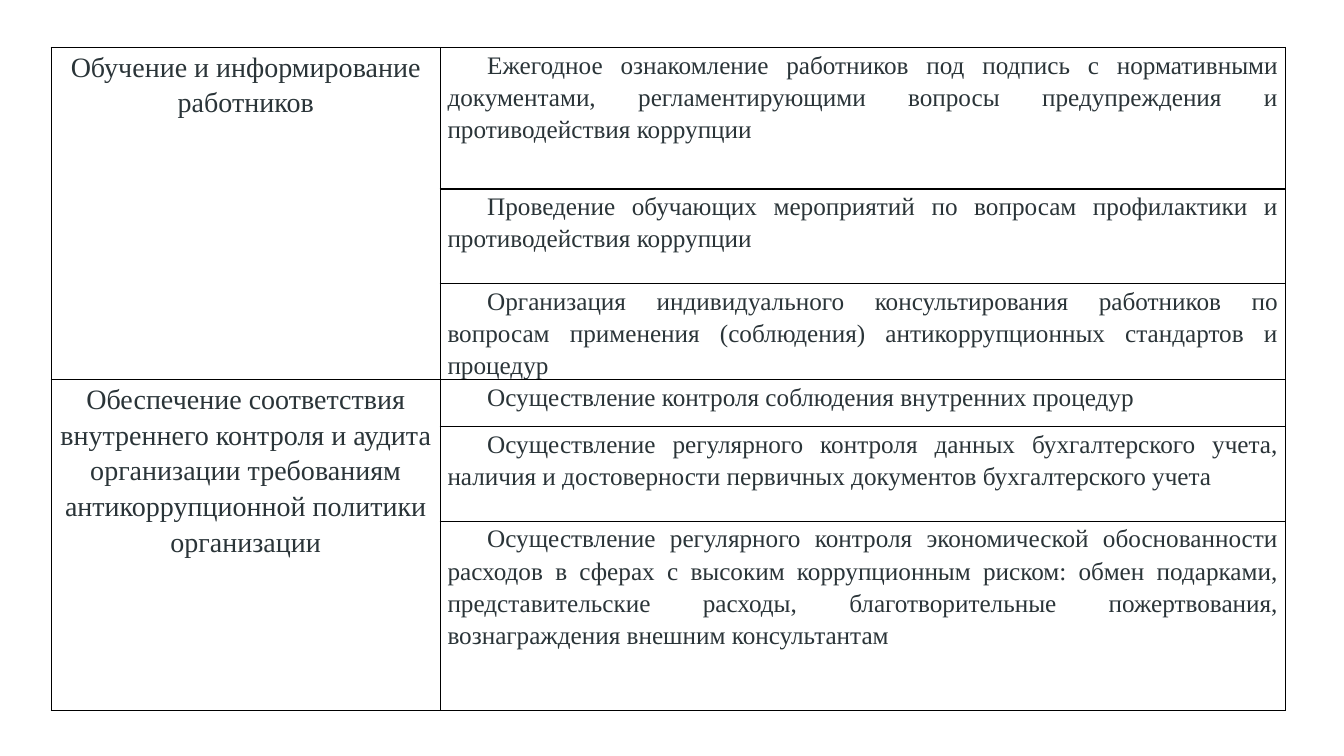
from lxml.etree import SubElement
from pptx import Presentation
from pptx.dml.color import RGBColor
from pptx.enum.text import PP_ALIGN as Align
from pptx.oxml.ns import qn
from pptx.util import Pt

MEASURES = [
    ("Обучение и информирование работников", [
        ("Ежегодное ознакомление работников под подпись с нормативными документами, "
         "регламентирующими вопросы предупреждения и противодействия коррупции", 3),
        ("Проведение обучающих мероприятий по вопросам профилактики и "
         "противодействия коррупции", 2),
        ("Организация индивидуального консультирования работников по вопросам "
         "применения (соблюдения) антикоррупционных стандартов и процедур", 2),
    ]),
    ("Обеспечение соответствия внутреннего контроля и аудита организации "
     "требованиям антикоррупционной политики организации", [
        ("Осуществление контроля соблюдения внутренних процедур", 1),
        ("Осуществление регулярного контроля данных бухгалтерского учета, наличия "
         "и достоверности первичных документов бухгалтерского учета", 2),
        ("Осуществление регулярного контроля экономической обоснованности расходов "
         "в сферах с высоким коррупционным риском: обмен подарками, "
         "представительские расходы, благотворительные пожертвования, "
         "вознаграждения внешним консультантам", 4),
    ]),
]
COLORS = {"text": "2A3438", "border": "000000", "page": "FFFFFF"}
FONT = "Times New Roman"
LEFT, TOP = 36.6, 33.9
COLUMN_WIDTHS = [277.9, 603.7]
LINE_HEIGHT = 33.72
CELL_MARGIN = 5.2
FIRST_LINE_INDENT = 28.35


def style_cell(cell):
    """Give the cell its margins, thin borders and page-coloured fill."""
    cell.margin_left = cell.margin_right = Pt(CELL_MARGIN)
    cell.margin_top = cell.margin_bottom = 0
    properties = cell._tc.get_or_add_tcPr()
    for side in ("lnL", "lnR", "lnT", "lnB"):
        border = SubElement(properties, qn(f"a:{side}"), w=str(Pt(1)))
        border_fill = SubElement(border, qn("a:solidFill"))
        SubElement(border_fill, qn("a:srgbClr"), val=COLORS["border"])
    cell.fill.solid()
    cell.fill.fore_color.rgb = RGBColor.from_string(COLORS["page"])


def write_cell(cell, text, size, align, indent=0):
    paragraph = cell.text_frame.paragraphs[0]
    paragraph.alignment = align
    paragraph.line_spacing = 1.15
    paragraph._p.get_or_add_pPr().set("indent", str(Pt(indent)))
    run = paragraph.add_run()
    run.text = text
    run.font.name = FONT
    run.font.size = Pt(size)
    run.font.color.rgb = RGBColor.from_string(COLORS["text"])


def main():
    deck = Presentation()
    deck.slide_width, deck.slide_height = Pt(960), Pt(540)
    slide = deck.slides.add_slide(deck.slide_layouts[6])

    row_lines = [lines for _, actions in MEASURES for _, lines in actions]
    table = slide.shapes.add_table(
        len(row_lines), len(COLUMN_WIDTHS), Pt(LEFT), Pt(TOP),
        Pt(sum(COLUMN_WIDTHS)), Pt(sum(row_lines) * LINE_HEIGHT)).table
    table.first_row = table.horz_banding = False
    for column, width in zip(table.columns, COLUMN_WIDTHS):
        column.width = Pt(width)
    for row, lines in zip(table.rows, row_lines):
        row.height = Pt(lines * LINE_HEIGHT)
    for cell in table.iter_cells():
        style_cell(cell)

    first = 0
    for direction, actions in MEASURES:
        last = first + len(actions) - 1
        table.cell(first, 0).merge(table.cell(last, 0))
        write_cell(table.cell(first, 0), direction, 20, Align.CENTER)
        for row, (action, _) in enumerate(actions, first):
            write_cell(table.cell(row, 1), action, 18, Align.JUSTIFY, FIRST_LINE_INDENT)
        first = last + 1

    deck.save("out.pptx")


if __name__ == "__main__":
    main()
